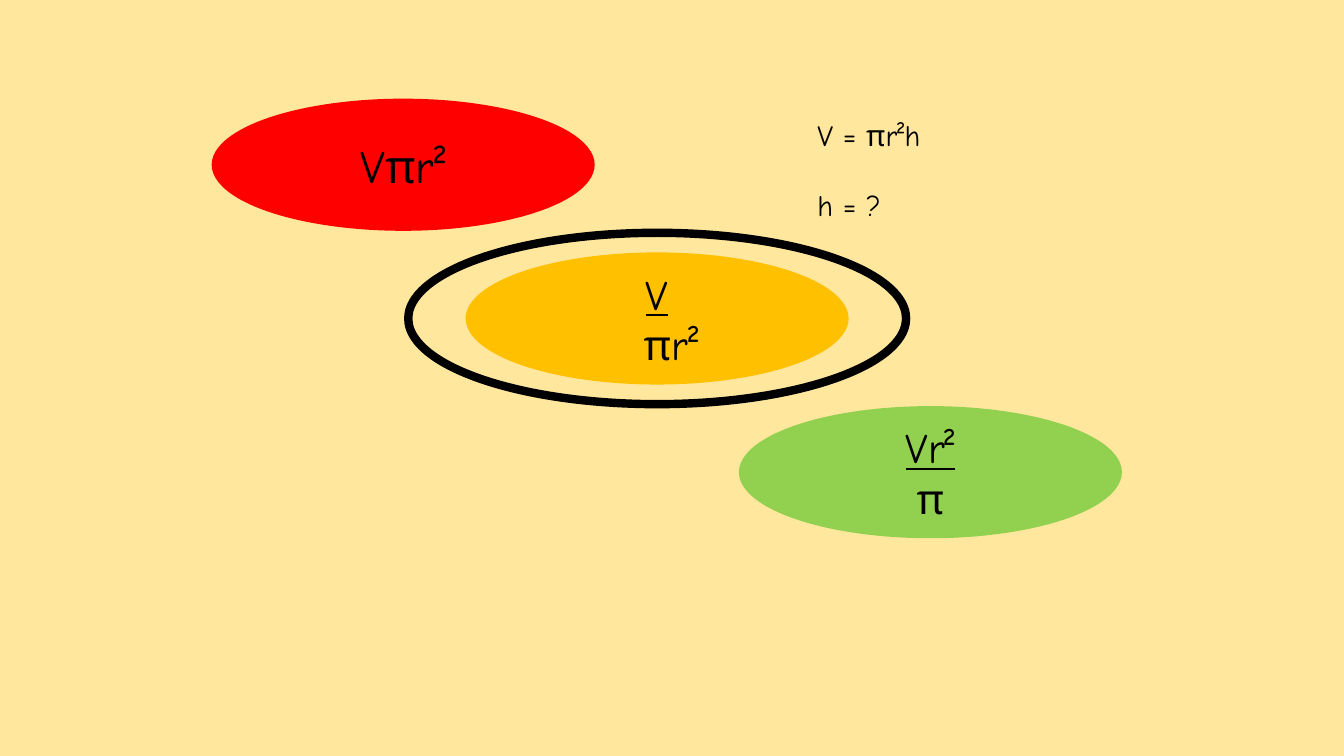
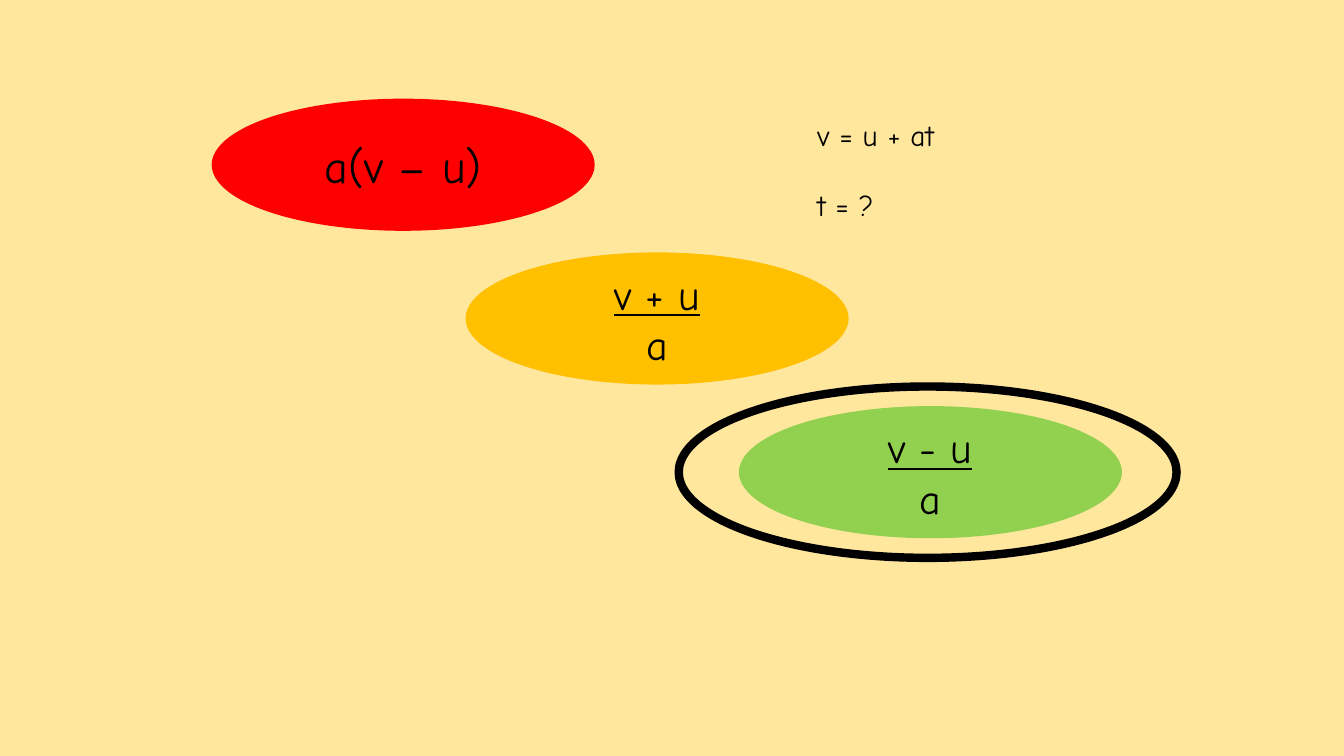
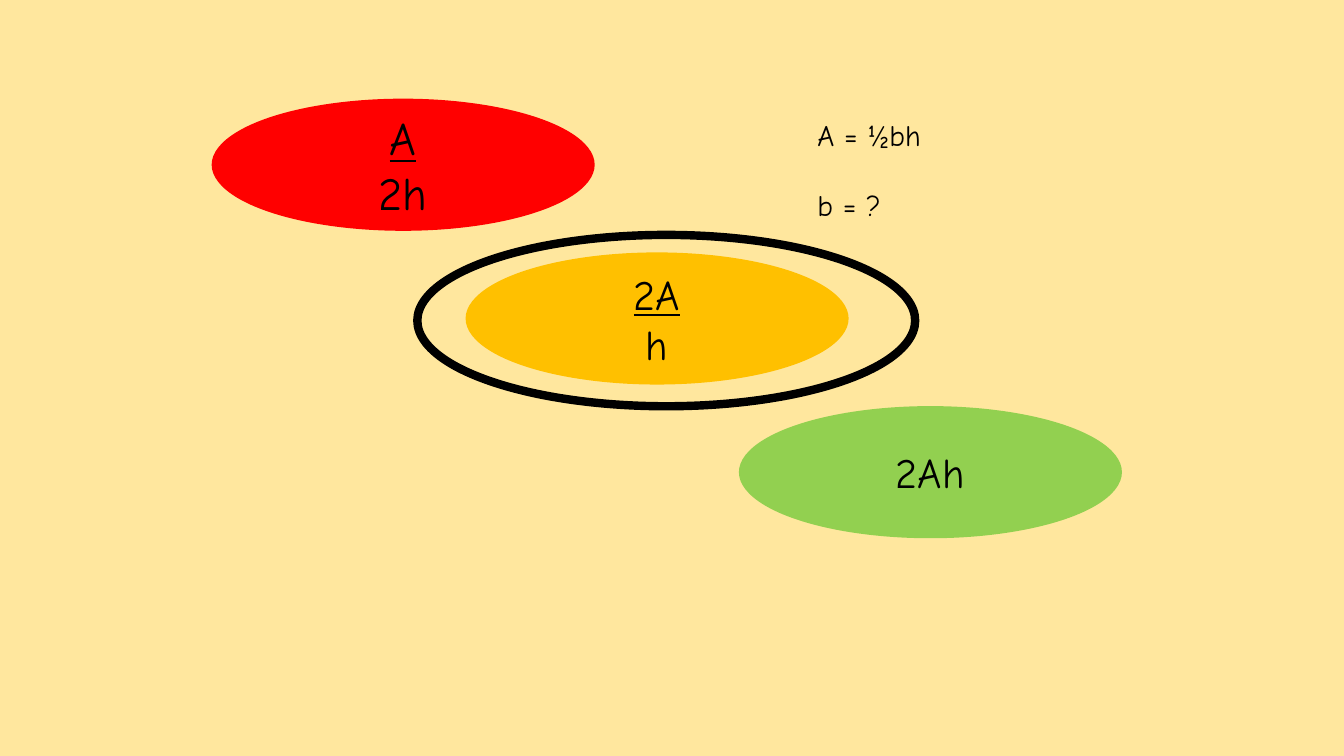
from dataclasses import dataclass

from pptx import Presentation
from pptx.dml.color import RGBColor
from pptx.enum import shapes, text
from pptx.util import Pt


@dataclass(frozen=True)
class Theme:
    font: str = "Comic Neue"
    ink: str = "000000"
    background: str = "FFE79E"
    question_size: float = 21
    question_gap: float = 25
    ring_width: float = 6


@dataclass(frozen=True)
class Option:
    """Colour, type size and top left corner of one answer."""
    color: str
    size: float
    left: float
    top: float


OPTIONS = {
    "red": Option("FF0000", 33, 151.2, 70.5),
    "amber": Option("FFC000", 30, 332.6, 180.3),
    "green": Option("92D050", 30, 527.8, 290.1),
}
OPTION_WIDTH, OPTION_HEIGHT = 273.6, 94.4
RING_WIDTH, RING_HEIGHT = 355.6, 122.4


class Quiz:
    def __init__(self, theme):
        self.theme = theme
        self.deck = Presentation()
        self.deck.slide_width, self.deck.slide_height = Pt(960), Pt(540)
        fill = self.deck.slide_master.background.fill
        fill.solid()
        fill.fore_color.rgb = RGBColor.from_string(theme.background)
        self.slide = None

    def new_slide(self):
        self.slide = self.deck.slides.add_slide(self.deck.slide_layouts[6])

    def style(self, paragraph, size, underline=False):
        for run in paragraph.runs:
            run.font.name = self.theme.font
            run.font.size = Pt(size)
            run.font.color.rgb = RGBColor.from_string(self.theme.ink)
            run.font.underline = underline

    def question(self, formula, unknown, width):
        box = self.slide.shapes.add_textbox(Pt(576.7), Pt(80), Pt(width), Pt(83.5))
        frame = box.text_frame
        frame.word_wrap = True
        frame.text = f"{formula}\n{unknown} = ?"
        for paragraph in frame.paragraphs:
            self.style(paragraph, self.theme.question_size)
        frame.paragraphs[1].space_before = Pt(self.theme.question_gap)

    def ellipse(self, left, top, width, height):
        oval = self.slide.shapes.add_shape(
            shapes.MSO_SHAPE.OVAL, Pt(left), Pt(top), Pt(width), Pt(height))
        oval.shadow.inherit = False
        return oval

    def answer(self, option, lines, indent=0):
        """Draw an answer; two lines make a fraction, indent moves its denominator."""
        oval = self.ellipse(option.left, option.top, OPTION_WIDTH, OPTION_HEIGHT)
        oval.fill.solid()
        oval.fill.fore_color.rgb = RGBColor.from_string(option.color)
        oval.line.fill.background()
        frame = oval.text_frame
        frame.vertical_anchor = text.MSO_ANCHOR.MIDDLE
        frame.text = "\n".join(lines)
        for index, paragraph in enumerate(frame.paragraphs):
            paragraph.alignment = text.PP_ALIGN.CENTER
            numerator = len(lines) == 2 and index == 0
            self.style(paragraph, option.size, underline=numerator)
        if indent:
            properties = frame.paragraphs[-1]._p.get_or_add_pPr()
            properties.set("marL", str(Pt(indent)))

    def ring(self, option, shift):
        """Circle the right answer, its centre moved by shift."""
        left = option.left + (OPTION_WIDTH - RING_WIDTH) / 2 + shift[0]
        top = option.top + (OPTION_HEIGHT - RING_HEIGHT) / 2 + shift[1]
        oval = self.ellipse(left, top, RING_WIDTH, RING_HEIGHT)
        oval.fill.background()
        oval.line.color.rgb = RGBColor.from_string(self.theme.ink)
        oval.line.width = Pt(self.theme.ring_width)


@dataclass(frozen=True)
class Problem:
    formula: str
    unknown: str
    answers: dict
    correct: str
    ring_shift: tuple = (0, 0)
    question_width: float = 138
    amber_indent: float = 0


PROBLEMS = [
    Problem("V = πr²h", "h",
            {"red": ["Vπr²"], "amber": ["V", "πr²"], "green": ["Vr²", "π"]},
            "amber", amber_indent=20),
    Problem("v = u + at", "t",
            {"red": ["a(v – u)"], "amber": ["v + u", "a"], "green": ["v - u", "a"]},
            "green", ring_shift=(-2, 0)),
    Problem("A = ½bh", "b",
            {"red": ["A", "2h"], "amber": ["2A", "h"], "green": ["2Ah"]},
            "amber", ring_shift=(6.5, 1.5), question_width=215),
]


def main():
    quiz = Quiz(Theme())
    for problem in PROBLEMS:
        quiz.new_slide()
        quiz.question(problem.formula, problem.unknown, problem.question_width)
        for name, lines in problem.answers.items():
            indent = problem.amber_indent if name == "amber" else 0
            quiz.answer(OPTIONS[name], lines, indent)
        quiz.ring(OPTIONS[problem.correct], problem.ring_shift)
    quiz.deck.save("out.pptx")


if __name__ == "__main__":
    main()
